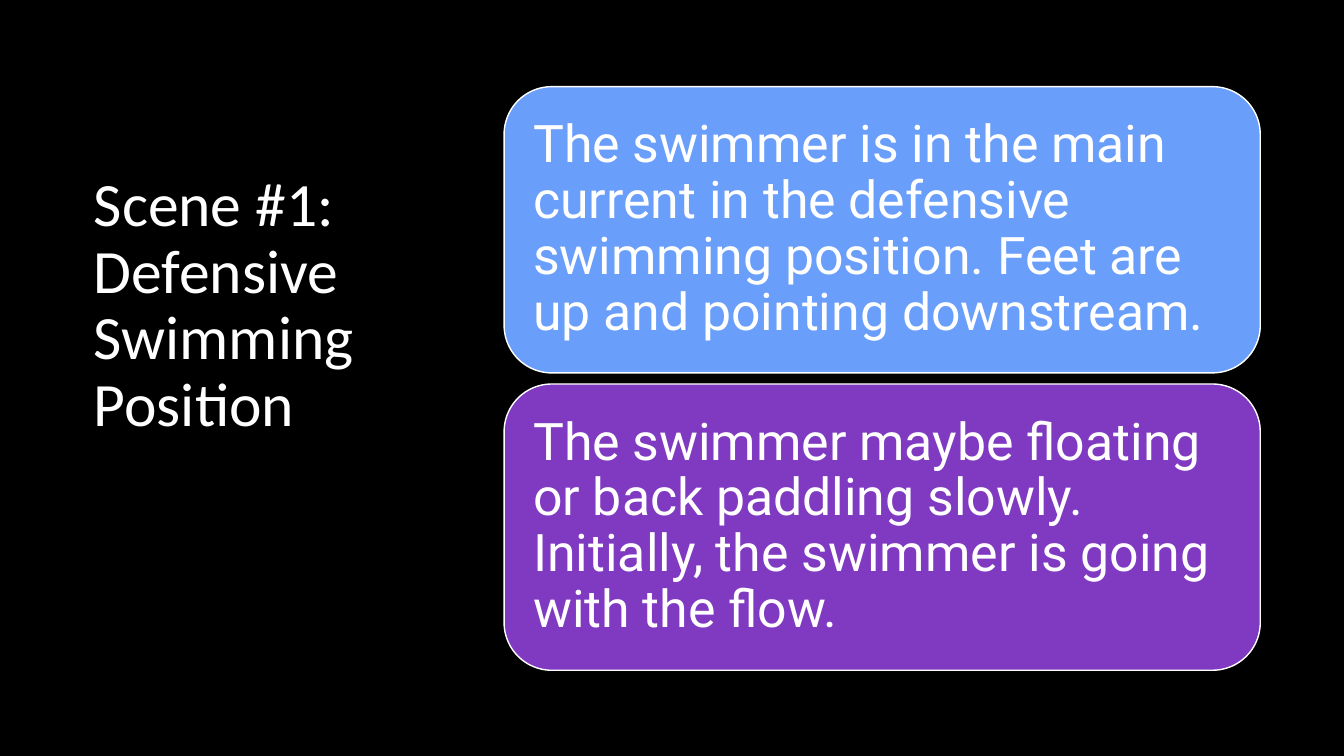
import dataclasses

import pptx
import pptx.dml.color
import pptx.enum.shapes
import pptx.enum.text
import pptx.util

INCHES = pptx.util.Inches
POINTS = pptx.util.Pt
ANCHOR = pptx.enum.text.MSO_ANCHOR

COLOURS = {"night": "000000", "white": "FFFFFF", "blue": "699EFA", "purple": "8039C1"}

SLIDE_WIDTH, SLIDE_HEIGHT = 13.33, 7.5
CARD_LEFT, CARD_TOP = 5, 0.86
CARD_WIDTH, CARD_HEIGHT = 7.5, 2.84
CARD_PITCH = 2.95


@dataclasses.dataclass
class Card:
    text: str
    colour: str


CARDS = [
    Card(
        "The swimmer is in the main current in the defensive swimming position. "
        "Feet are up and pointing downstream.",
        "blue",
    ),
    Card(
        "The swimmer maybe floating or back paddling slowly. "
        "Initially, the swimmer is going with the flow.",
        "purple",
    ),
]


def colour(name: str) -> pptx.dml.color.RGBColor:
    return pptx.dml.color.RGBColor.from_string(COLOURS[name])


def write(shape, text: str, font: str, size: float, anchor, margins: tuple[float, float]) -> None:
    """Fill the shape with one left-aligned white paragraph; margins are side and top."""
    side, top = (INCHES(margin) for margin in margins)
    frame = shape.text_frame
    frame.text = text
    para = frame.paragraphs[0]
    span = para.runs[0]
    formats = [
        (frame, {
            "word_wrap": True,
            "auto_size": pptx.enum.text.MSO_AUTO_SIZE.NONE,
            "vertical_anchor": anchor,
            "margin_left": side,
            "margin_right": side,
            "margin_top": top,
            "margin_bottom": top,
        }),
        (para, {"alignment": pptx.enum.text.PP_ALIGN.LEFT, "line_spacing": 0.9}),
        (span.font, {"name": font, "size": POINTS(size)}),
    ]
    for target, values in formats:
        for name, value in values.items():
            setattr(target, name, value)
    span.font.color.rgb = colour("white")


def add_title(page, text: str) -> None:
    title = page.shapes.title
    place = {"left": 0.83, "top": 1.67, "width": 4.17, "height": 4.16}
    for name, value in place.items():
        setattr(title, name, INCHES(value))
    write(title, text, "Calibri", 44, ANCHOR.TOP, (0.1, 0.05))


def add_card(page, row: int, card: Card) -> None:
    box = page.shapes.add_shape(
        pptx.enum.shapes.MSO_SHAPE.ROUNDED_RECTANGLE,
        INCHES(CARD_LEFT),
        INCHES(CARD_TOP + row * CARD_PITCH),
        INCHES(CARD_WIDTH),
        INCHES(CARD_HEIGHT),
    )
    box.shadow.inherit = False
    box.fill.solid()
    box.fill.fore_color.rgb = colour(card.colour)
    box.line.color.rgb = colour("white")
    box.line.width = POINTS(1)
    # The rounded corners add about 0.14 inches to every margin.
    write(box, card.text, "Roboto", 37, ANCHOR.MIDDLE, (0.15, 0.15))


def main() -> None:
    deck = pptx.Presentation()
    deck.slide_width = INCHES(SLIDE_WIDTH)
    deck.slide_height = INCHES(SLIDE_HEIGHT)
    page = deck.slides.add_slide(deck.slide_layouts.get_by_name("Title Only"))
    page.background.fill.solid()
    page.background.fill.fore_color.rgb = colour("night")
    add_title(page, "Scene #1: Defensive Swimming Position")
    for row, card in enumerate(CARDS):
        add_card(page, row, card)
    deck.save("out.pptx")


if __name__ == "__main__":
    main()
